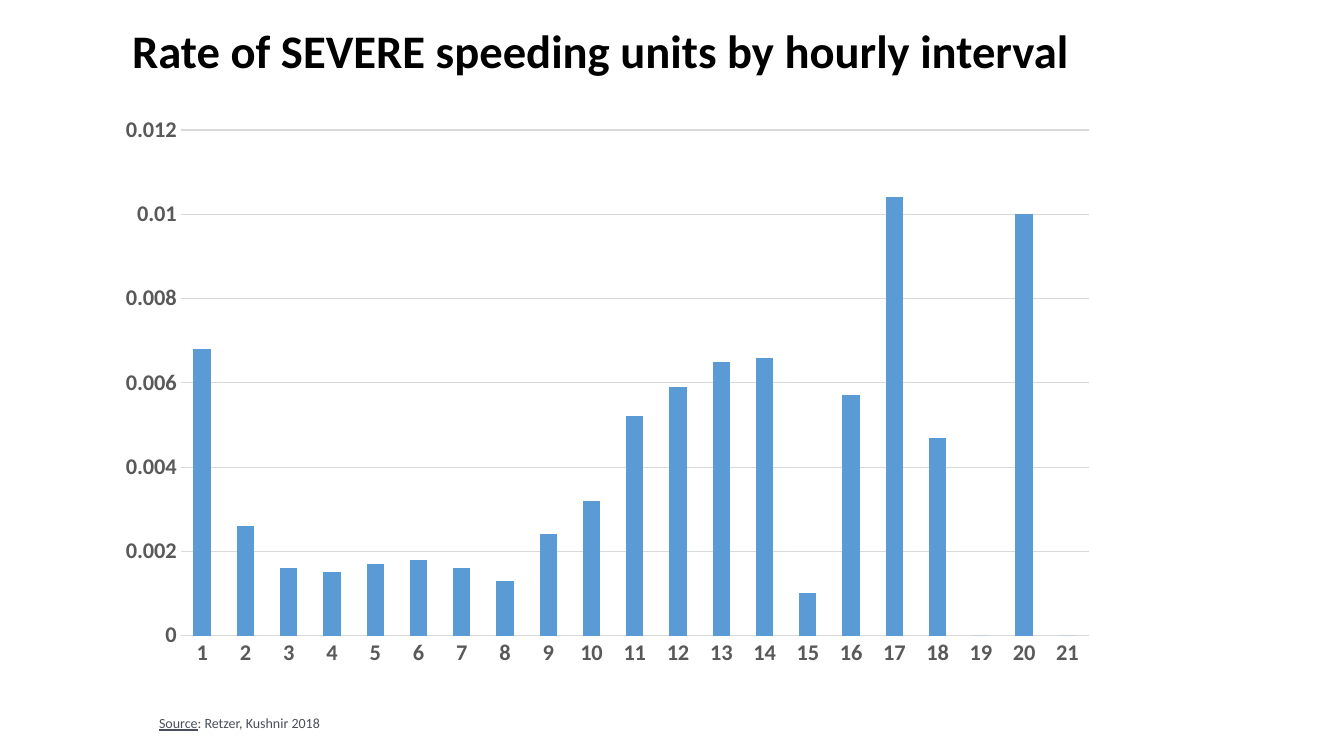
from pptx import Presentation
from pptx.chart.data import CategoryChartData
from pptx.dml.color import RGBColor
from pptx.enum.chart import XL_CHART_TYPE, XL_TICK_MARK
from pptx.enum.text import MSO_ANCHOR, MSO_AUTO_SIZE, PP_ALIGN
from pptx.util import Inches, Pt

FONT = "Calibri"
COLORS = {
    "title": "000000",
    "source": "49505A",
    "axis_text": "595959",
    "grid": "D9D9D9",
    "bar": "5B9BD5",
}
SPEEDING_RATES = [
    0.0068, 0.0026, 0.0016, 0.0015, 0.0017, 0.0018, 0.0016,
    0.0013, 0.0024, 0.0032, 0.0052, 0.0059, 0.0065, 0.0066,
    0.001, 0.0057, 0.0104, 0.0047, 0, 0.01, 0,
]


def color(name):
    return RGBColor.from_string(COLORS[name])


def format_font(font, size, color_name, bold=False, underline=False):
    font.name = FONT
    font.size = Pt(size)
    font.bold = bold
    font.underline = underline
    font.color.rgb = color(color_name)


def add_run(paragraph, text, **font_format):
    run = paragraph.add_run()
    run.text = text
    format_font(run.font, **font_format)


def place(shape, left, top, width, height):
    shape.left, shape.top = Inches(left), Inches(top)
    shape.width, shape.height = Inches(width), Inches(height)


def add_title(slide, text):
    title = slide.shapes.title
    place(title, 1.21, 0.17, 9.79, 1.17)
    frame = title.text_frame
    frame.word_wrap = True
    frame.auto_size = MSO_AUTO_SIZE.NONE
    frame.vertical_anchor = MSO_ANCHOR.TOP
    paragraph = frame.paragraphs[0]
    paragraph.alignment = PP_ALIGN.LEFT
    add_run(paragraph, text, size=33.3, color_name="title", bold=True)


def format_axis(axis):
    axis.major_tick_mark = XL_TICK_MARK.NONE
    axis.minor_tick_mark = XL_TICK_MARK.NONE
    format_font(axis.tick_labels.font, 16, "axis_text", bold=True)


def format_line(line):
    line.color.rgb = color("grid")
    line.width = Pt(0.75)


def add_rate_chart(slide):
    data = CategoryChartData(number_format="General")
    data.categories = [str(hour) for hour in range(1, len(SPEEDING_RATES) + 1)]
    data.add_series("Series 1", SPEEDING_RATES)
    chart = slide.shapes.add_chart(
        XL_CHART_TYPE.COLUMN_CLUSTERED,
        Inches(1.05), Inches(1.04), Inches(9.95), Inches(5.69), data,
    ).chart
    chart.has_title = False
    chart.has_legend = False
    format_font(chart.font, 16, "title")

    # Columns
    plot = chart.plots[0]
    plot.gap_width = 150
    plot.vary_by_categories = False
    fill = plot.series[0].format.fill
    fill.solid()
    fill.fore_color.rgb = color("bar")

    # Axes and gridlines
    format_axis(chart.category_axis)
    format_line(chart.category_axis.format.line)
    value_axis = chart.value_axis
    format_axis(value_axis)
    value_axis.minimum_scale = 0
    value_axis.maximum_scale = 0.012
    value_axis.major_unit = 0.002
    value_axis.format.line.fill.background()
    format_line(value_axis.major_gridlines.format.line)


def add_source(slide, label, text):
    box = slide.shapes.add_textbox(
        Inches(1.48), Inches(7.04), Inches(9.17), Inches(0.27))
    frame = box.text_frame
    frame.word_wrap = True
    frame.auto_size = MSO_AUTO_SIZE.SHAPE_TO_FIT_TEXT
    paragraph = frame.paragraphs[0]
    add_run(paragraph, label, size=10, color_name="source", underline=True)
    add_run(paragraph, text, size=10, color_name="source")


def main():
    presentation = Presentation()
    presentation.slide_width = Inches(13.33)
    presentation.slide_height = Inches(7.5)
    title_only = presentation.slide_layouts[5]
    slide = presentation.slides.add_slide(title_only)
    add_rate_chart(slide)
    add_title(slide, "Rate of SEVERE speeding units by hourly interval")
    add_source(slide, "Source", ": Retzer, Kushnir 2018")
    presentation.save("out.pptx")


if __name__ == "__main__":
    main()
